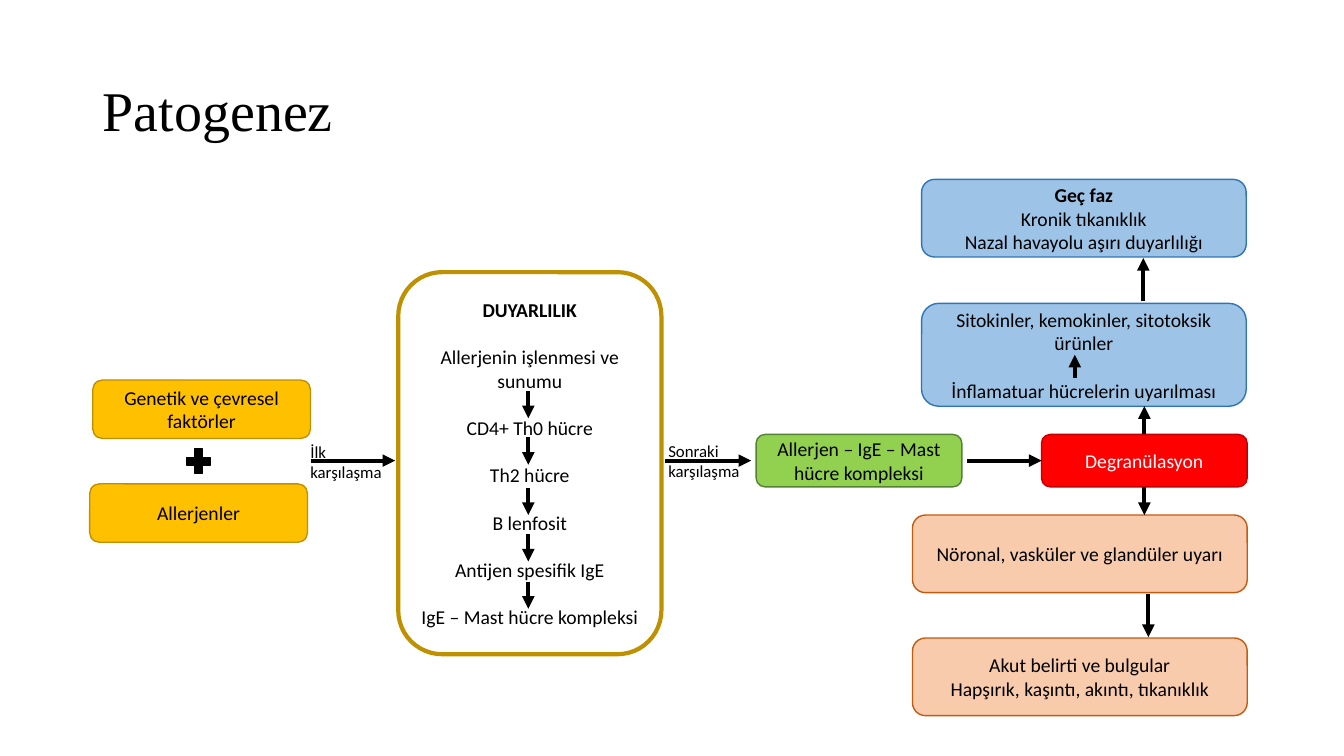
import pptx
import pptx.util
import pptx.dml.color
import pptx.enum.shapes
import pptx.enum.text
import lxml.etree
from pptx.oxml.ns import qn

Inches, Pt = pptx.util.Inches, pptx.util.Pt
SHAPE = pptx.enum.shapes.MSO_SHAPE
ALIGN = pptx.enum.text.PP_ALIGN
MIDDLE = pptx.enum.text.MSO_ANCHOR.MIDDLE

COLORS = {
    "black": "000000", "white": "FFFFFF",
    "gold": "FFC000", "ochre": "BF9000",
    "green": "92D050", "forest": "548235",
    "red": "FF0000", "crimson": "C00000",
    "peach": "F8CBAD", "rust": "C55A11",
    "sky": "9DC3E6", "blue": "2E75B6",
}
TITLE = "Patogenez"
GAP = 17  # one line of 14 pt text, in points

# name: (left, top, width, height), fill, line, line width, text colour,
#       paragraphs as (text, bold, space before)
BOXES = {
    "genes": ((0.92, 3.77, 2.16, 0.58), "gold", "ochre", 1, "black",
              [("Genetik ve çevresel faktörler", False, 0)]),
    "allergens": ((0.89, 4.8, 2.16, 0.58), "gold", "ochre", 1, "black",
                  [("Allerjenler", False, 0)]),
    "sensitive": ((3.95, 2.7, 2.61, 3.79), None, "ochre", 3, "black",
                  [("DUYARLILIK", True, 0),
                   ("Allerjenin işlenmesi ve sunumu", False, GAP),
                   ("CD4+ Th0 hücre", False, GAP),
                   ("Th2 hücre", False, GAP),
                   ("B lenfosit", False, GAP),
                   ("Antijen spesifik IgE", False, GAP),
                   ("IgE – Mast hücre kompleksi", False, GAP)]),
    "complex": ((7.5, 4.31, 2.04, 0.52), "green", "forest", 1, "black",
                [("Allerjen – IgE – Mast hücre kompleksi", False, 0)]),
    "release": ((10.33, 4.31, 2.04, 0.52), "red", "crimson", 1, "white",
                [("Degranülasyon", False, 0)]),
    "nerve": ((9.05, 5.11, 3.32, 0.77), "peach", "rust", 1, "black",
              [("Nöronal, vasküler ve glandüler uyarı", False, 0)]),
    "acute": ((9.05, 6.33, 3.32, 0.77), "peach", "rust", 1, "black",
              [("Akut belirti ve bulgular", False, 0),
               ("Hapşırık, kaşıntı, akıntı, tıkanıklık", False, 0)]),
    "late": ((9.14, 1.78, 3.22, 0.77), "sky", "blue", 1, "black",
             [("Geç faz", True, 0),
              ("Kronik tıkanıklık", False, 0),
              ("Nazal havayolu aşırı duyarlılığı", False, 0)]),
    "cells": ((9.14, 3.01, 3.22, 1.02), "sky", "blue", 1, "black",
              [("Sitokinler, kemokinler, sitotoksik ürünler", False, 0),
               ("İnflamatuar hücrelerin uyarılması", False, GAP)]),
}
PLUS = (1.81, 4.41, 0.32, 0.33)
LABELS = [
    ("İlk karşılaşma", (2.98, 4.33, 0.94, 0.5)),
    ("Sonraki karşılaşma", (6.53, 4.32, 0.97, 0.5)),
]
ROW = 4.57  # height of the main row of arrows
STEP_X, STEP_LEN = 5.24, 0.27
STEPS = [3.88, 4.34, 4.84, 5.3, 5.77]
# start, end
ARROWS = [
    ((3.08, ROW), (3.92, ROW)),
    ((6.6, ROW), (7.45, ROW)),
    ((10.66, 3.75), (10.66, 3.52)),
    ((11.39, 5.89), (11.39, 6.32)),
    ((11.34, 2.99), (11.34, 2.56)),
] + [((STEP_X, y), (STEP_X, y + STEP_LEN)) for y in STEPS]


def rgb(name):
    return pptx.dml.color.RGBColor.from_string(COLORS[name])


def place(area):
    return [Inches(v) for v in area]


def write(para, text, size, color="black", bold=False, font="Calibri"):
    run = para.add_run()
    run.text = text
    run.font.name, run.font.size, run.font.bold = font, Pt(size), bold
    run.font.color.rgb = rgb(color)


def draw(slide, kind, area, fill, line, width):
    shape = slide.shapes.add_shape(kind, *place(area))
    shape.shadow.inherit = False
    if fill:
        shape.fill.solid()
        shape.fill.fore_color.rgb = rgb(fill)
    else:
        shape.fill.background()
    shape.line.color.rgb = rgb(line)
    shape.line.width = Pt(width)
    return shape


def add_box(slide, area, fill, line, width, color, paras):
    box = draw(slide, SHAPE.ROUNDED_RECTANGLE, area, fill, line, width)
    frame = box.text_frame
    frame.word_wrap = True
    frame.vertical_anchor = MIDDLE
    for i, (text, bold, gap) in enumerate(paras):
        para = frame.add_paragraph() if i else frame.paragraphs[0]
        para.alignment = ALIGN.CENTER
        if gap:
            para.space_before = Pt(gap)
        write(para, text, 14, color, bold)
    return box


def add_arrow(slide, start, end):
    arrow = slide.shapes.add_connector(
        pptx.enum.shapes.MSO_CONNECTOR.STRAIGHT, *place(start + end))
    arrow.line.color.rgb = rgb("black")
    arrow.line.width = Pt(3)
    line = arrow.line._get_or_add_ln()
    lxml.etree.SubElement(line, qn("a:tailEnd"), type="triangle")
    lxml.etree.SubElement(arrow._element.spPr, qn("a:effectLst"))
    return arrow


def add_label(slide, text, area):
    frame = slide.shapes.add_textbox(*place(area)).text_frame
    frame.word_wrap = True
    write(frame.paragraphs[0], text, 12)


def add_title(slide):
    title = slide.shapes.title
    title.left, title.top, title.width, title.height = place(
        (0.92, 0.4, 11.5, 1.45))
    title.text_frame.vertical_anchor = MIDDLE
    para = title.text_frame.paragraphs[0]
    para.alignment = ALIGN.LEFT
    para.line_spacing = 0.9
    write(para, TITLE, 40, font="Times New Roman")


def main():
    deck = pptx.Presentation()
    deck.slide_width, deck.slide_height = Inches(13.33), Inches(7.5)
    slide = deck.slides.add_slide(deck.slide_layouts[5])
    add_title(slide)
    boxes = {name: add_box(slide, *parts) for name, parts in BOXES.items()}
    draw(slide, SHAPE.MATH_PLUS, PLUS, "black", "black", 1)
    for start, end in ARROWS:
        add_arrow(slide, start, end)
    release = boxes["release"]
    add_arrow(slide, (9.59, ROW), (10.33, ROW)).end_connect(release, 1)
    add_arrow(slide, (11.35, 4.31), (11.35, 4.03)).begin_connect(release, 0)
    add_arrow(slide, (11.35, 4.83), (11.35, 5.11)).begin_connect(release, 2)
    for text, area in LABELS:
        add_label(slide, text, area)
    deck.save("out.pptx")


if __name__ == "__main__":
    main()
